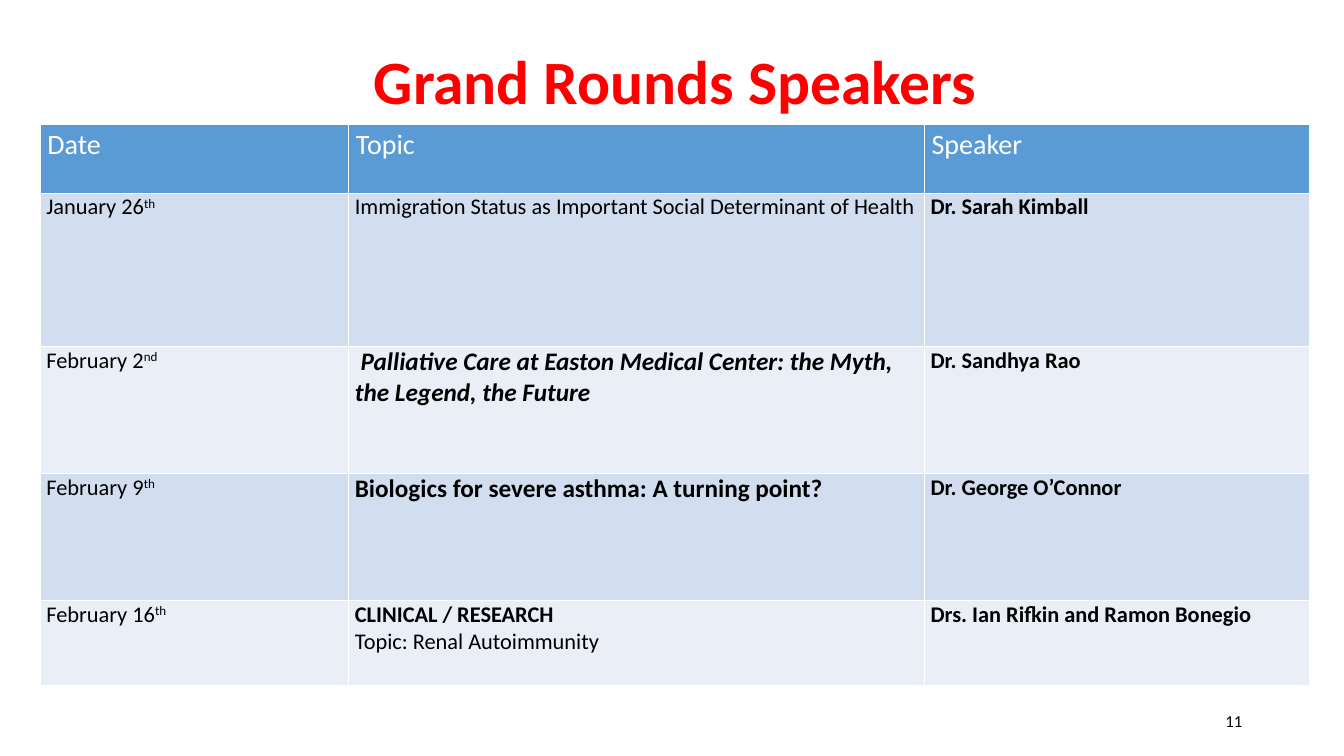
from dataclasses import dataclass

from pptx import Presentation
from pptx.dml.color import RGBColor
from pptx.enum.text import MSO_ANCHOR, PP_ALIGN
from pptx.util import Inches, Pt


@dataclass(frozen=True)
class Theme:
    font: str = "Calibri"
    red: str = "FF0000"
    white: str = "FFFFFF"
    black: str = "000000"
    header: str = "5B9BD5"
    bands: tuple = ("D2DEEF", "EAEFF7")
    title_size: int = 44
    header_size: int = 20
    topic_size: int = 18
    body_size: int = 16
    number_size: int = 12


theme = Theme()


def style(span, size, color, bold=False, italic=False):
    span.font.name = theme.font
    span.font.size = Pt(size)
    span.font.bold = bold
    span.font.italic = italic
    span.font.color.rgb = RGBColor.from_string(color)


def fill_cell(cell, color, side, top):
    cell.fill.solid()
    cell.fill.fore_color.rgb = RGBColor.from_string(color)
    cell.margin_left = cell.margin_right = Inches(side)
    cell.margin_top = cell.margin_bottom = Inches(top)


deck = Presentation()
deck.slide_width, deck.slide_height = Inches(13.33), Inches(7.5)
page = deck.slides.add_slide(deck.slide_layouts[5])

# Title
title = page.shapes.title
title.left, title.top = Inches(0.95), Inches(0.11)
title.width, title.height = Inches(11.5), Inches(1.45)
title.text_frame.text = "Grand Rounds Speakers"
title.text_frame.vertical_anchor = MSO_ANCHOR.MIDDLE
para = title.text_frame.paragraphs[0]
para.alignment = PP_ALIGN.CENTER
para.line_spacing = 0.9
style(para.runs[0], theme.title_size, theme.red, bold=True)

# Schedule: day, ordinal suffix, topic lines (text, size, bold, italic), speaker
headings = ["Date", "Topic", "Speaker"]
body, large = theme.body_size, theme.topic_size
talks = [
    ("January 26", "th",
     [("Immigration Status as Important Social Determinant of Health", body, False, False)],
     "Dr. Sarah Kimball"),
    ("February 2", "nd",
     [(" Palliative Care at Easton Medical Center: the Myth, the Legend, the Future",
       large, True, True)],
     "Dr. Sandhya Rao"),
    ("February 9", "th",
     [("Biologics for severe asthma: A turning point?", large, True, False)],
     "Dr. George O’Connor"),
    ("February 16", "th",
     [("CLINICAL / RESEARCH", body, True, False),
      ("Topic: Renal Autoimmunity", body, False, False)],
     "Drs. Ian Rifkin and Ramon Bonegio"),
]
column_widths = [3.06, 5.71, 3.82]
row_heights = [0.69, 1.52, 1.26, 1.26, 0.84]

# Table grid
table = page.shapes.add_table(
    len(row_heights), len(column_widths), Inches(0.4), Inches(1.23),
    Inches(sum(column_widths)), Inches(sum(row_heights))).table
for column, width in zip(table.columns, column_widths):
    column.width = Inches(width)
for row, height in zip(table.rows, row_heights):
    row.height = Inches(height)

# Header row
for cell, heading in zip(table.rows[0].cells, headings):
    fill_cell(cell, theme.header, 0.07, 0.04)
    cell.text_frame.text = heading
    style(cell.text_frame.paragraphs[0].runs[0], theme.header_size, theme.white)

# Talk rows
for index, (day, suffix, topic_lines, speaker) in enumerate(talks):
    cells = list(table.rows[index + 1].cells)
    for cell in cells:
        fill_cell(cell, theme.bands[index % 2], 0.06, 0)
    date_cell, topic_cell, speaker_cell = cells

    para = date_cell.text_frame.paragraphs[0]
    for text in (day, suffix):
        span = para.add_run()
        span.text = text
        style(span, body, theme.black)
    span.font._element.set("baseline", "30000")  # superscript suffix

    topic_cell.text_frame.text = "\n".join(line[0] for line in topic_lines)
    for para, (_, size, bold, italic) in zip(topic_cell.text_frame.paragraphs, topic_lines):
        style(para.runs[0], size, theme.black, bold, italic)

    speaker_cell.text_frame.text = speaker
    style(speaker_cell.text_frame.paragraphs[0].runs[0], body, theme.black, bold=True)

# Page number
box = page.shapes.add_textbox(Inches(9.42), Inches(6.95), Inches(3), Inches(0.4))
box.text_frame.word_wrap = True
box.text_frame.vertical_anchor = MSO_ANCHOR.MIDDLE
box.text_frame.text = "11"
para = box.text_frame.paragraphs[0]
para.alignment = PP_ALIGN.RIGHT
style(para.runs[0], theme.number_size, theme.black)

deck.save("out.pptx")
